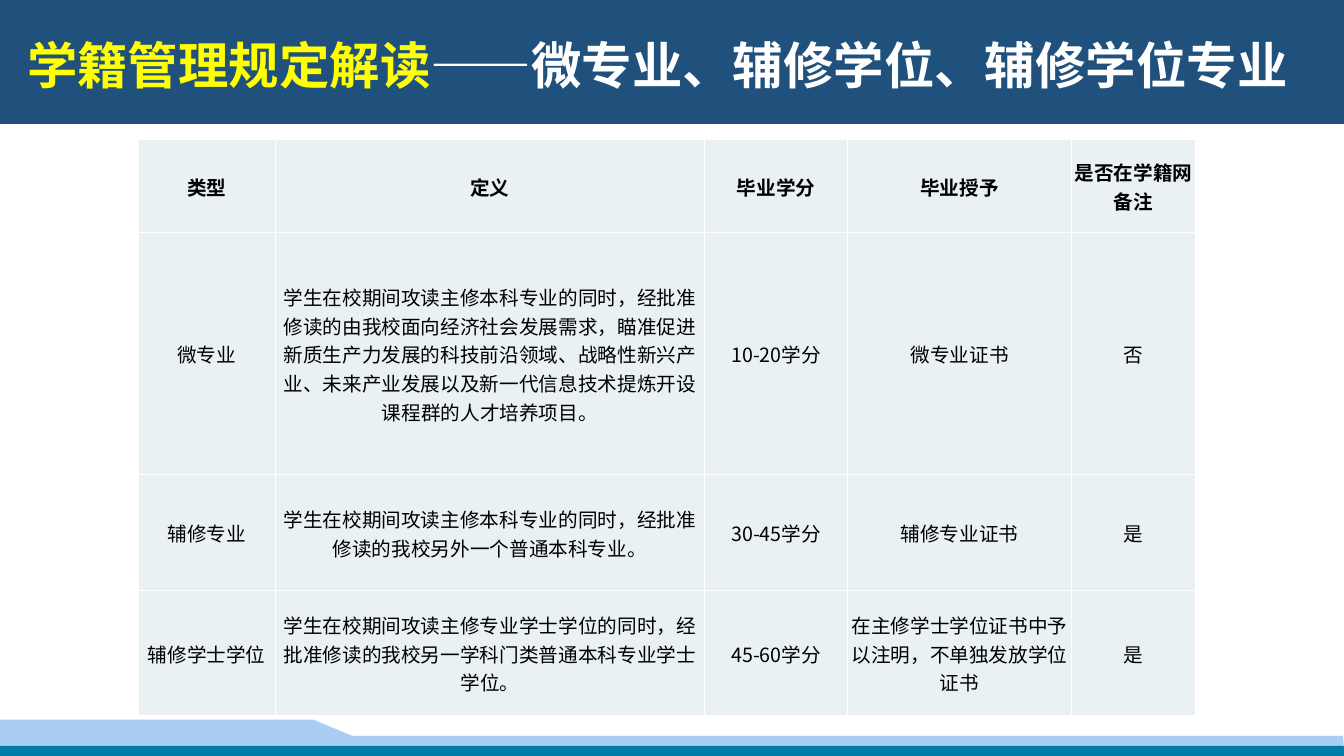
import lxml.etree
import pptx
import pptx.dml.color
import pptx.enum.shapes
import pptx.enum.text
import pptx.oxml.ns
import pptx.util

HUES = {
    "navy": "20517C", "sky": "AACDF4", "teal": "007CA8", "pale": "E9F1F5",
    "gold": "FFFF00", "white": "FFFFFF", "black": "000000",
}
FACE = "Noto Sans CJK SC"
COLS = [10.2, 31.95, 10.65, 16.65, 9.23]
ROWS = [12.4, 32, 15.33, 16.53]
DATA = [
    ["类型", "定义", "毕业学分", "毕业授予", "是否在学籍网备注"],
    ["微专业",
     "学生在校期间攻读主修本科专业的同时，经批准修读的由我校面向经济社会发展需求，"
     "瞄准促进新质生产力发展的科技前沿领域、战略性新兴产业、未来产业发展以及"
     "新一代信息技术提炼开设课程群的人才培养项目。",
     "10-20学分", "微专业证书", "否"],
    ["辅修专业",
     "学生在校期间攻读主修本科专业的同时，经批准修读的我校另外一个普通本科专业。",
     "30-45学分", "辅修专业证书", "是"],
    ["辅修学士学位",
     "学生在校期间攻读主修专业学士学位的同时，经批准修读的我校另一学科门类普通本科专业学士学位。",
     "45-60学分", "在主修学士学位证书中予以注明，不单独发放学位证书", "是"],
]
WAVE = [(0, 99.2), (100, 99.07), (99.93, 97.33), (26.18, 97.33), (23.33, 95.2), (0, 95.2)]


def tint(name):
    return pptx.dml.color.RGBColor.from_string(HUES[name])


def apply(item, form):
    for key, value in form.items():
        setattr(item, key, value)


class Page:
    """Draws styled elements on a slide split into 100 columns and 100 rows."""

    def __init__(self, deck):
        self.wide, self.high = deck.slide_width, deck.slide_height
        self.shapes = deck.slides.add_slide(deck.slide_layouts[6]).shapes

    def col(self, share):
        return round(self.wide * share / 100)

    def row(self, share):
        return round(self.high * share / 100)

    def area(self, left, top, width, height):
        return self.col(left), self.row(top), self.col(width), self.row(height)

    def paint(self, shape, hue):
        shape.shadow.inherit = False
        shape.fill.solid()
        shape.fill.fore_color.rgb = tint(hue)
        shape.line.fill.background()

    def bar(self, box, hue):
        kind = pptx.enum.shapes.MSO_SHAPE.RECTANGLE
        self.paint(self.shapes.add_shape(kind, *self.area(*box)), hue)

    def wave(self, dots, hue):
        spots = [(self.col(x), self.row(y)) for x, y in dots]
        pen = self.shapes.build_freeform(*spots[0], scale=1)
        pen.add_line_segments(spots[1:], close=True)
        self.paint(pen.convert_to_shape(), hue)

    def words(self, para, text, size, hue, bold):
        run = para.add_run()
        run.text = text
        apply(run.font, {"name": FACE, "size": pptx.util.Pt(size), "bold": bold})
        run.font.color.rgb = tint(hue)
        props = run._r.get_or_add_rPr()
        face = lxml.etree.SubElement(props, pptx.oxml.ns.qn("a:ea"))
        face.set("typeface", FACE)

    def title(self, box, parts):
        frame = self.shapes.add_textbox(*self.area(*box)).text_frame
        apply(frame, {
            "word_wrap": True,
            "auto_size": pptx.enum.text.MSO_AUTO_SIZE.SHAPE_TO_FIT_TEXT,
        })
        for text, hue in parts:
            self.words(frame.paragraphs[0], text, 36, hue, True)

    def edge(self, cell, hue):
        props = cell._tc.get_or_add_tcPr()
        for side in "LRTB":
            line = lxml.etree.SubElement(props, pptx.oxml.ns.qn(f"a:ln{side}"))
            line.set("w", str(int(pptx.util.Pt(1))))
            fill = lxml.etree.SubElement(line, pptx.oxml.ns.qn("a:solidFill"))
            lxml.etree.SubElement(fill, pptx.oxml.ns.qn("a:srgbClr")).set("val", HUES[hue])

    def table(self, left, top, cols, rows, data):
        box = self.area(left, top, sum(cols), sum(rows))
        grid = self.shapes.add_table(len(rows), len(cols), *box).table
        for item, share in zip(grid.columns, cols):
            item.width = self.col(share)
        for item, share in zip(grid.rows, rows):
            item.height = self.row(share)
        thin = pptx.util.Inches(0.01)
        form = {
            "margin_left": thin, "margin_right": thin, "margin_top": thin,
            "margin_bottom": 0, "vertical_anchor": pptx.enum.text.MSO_ANCHOR.MIDDLE,
        }
        for r, line in enumerate(data):
            for c, text in enumerate(line):
                cell = grid.cell(r, c)
                apply(cell, form)
                self.edge(cell, "white")
                cell.fill.solid()
                cell.fill.fore_color.rgb = tint("pale")
                para = cell.text_frame.paragraphs[0]
                para.alignment = pptx.enum.text.PP_ALIGN.CENTER
                self.words(para, text, 14, "black", r == 0)


def main():
    deck = pptx.Presentation()
    apply(deck, {
        "slide_width": pptx.util.Inches(13.33),
        "slide_height": pptx.util.Inches(7.5),
    })
    page = Page(deck)
    page.bar((-0.2, 0, 100.2, 16.4), "navy")
    page.wave(WAVE, "sky")
    page.bar((0, 98.67, 100, 1.73), "teal")
    page.title((1.28, 3.87, 98.72, 9.47), [
        ("学籍管理规定解读", "gold"),
        ("——微专业、辅修学位、辅修学位专业", "white"),
    ])
    page.table(10.28, 18.4, COLS, ROWS, DATA)
    deck.save("out.pptx")


if __name__ == "__main__":
    main()
